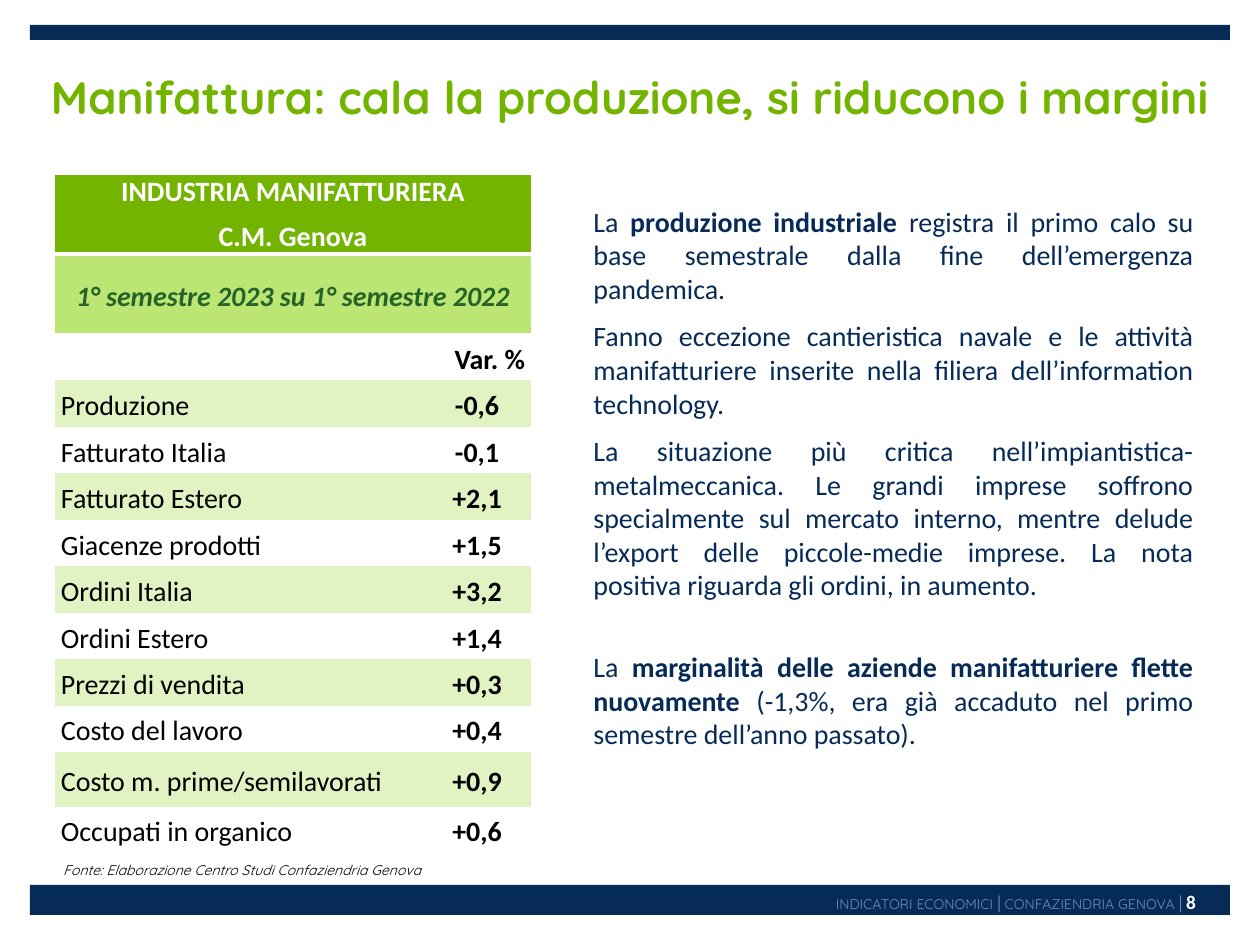
from dataclasses import dataclass, replace
from typing import Any

from lxml.etree import SubElement
from pptx import Presentation
from pptx.dml.color import RGBColor
from pptx.enum.shapes import MSO_SHAPE as Shape
from pptx.enum.text import MSO_ANCHOR as Anchor, MSO_AUTO_SIZE as AutoSize, PP_ALIGN as Align
from pptx.oxml.ns import qn
from pptx.util import Emu, Pt

PX = 914400 / 126
NAVY, GREEN, WHITE, BLACK = "062B57", "73B400", "FFFFFF", "000000"
NO_GRID_STYLE = "{2D5ABB26-0587-4C30-8999-92F81FD0307C}"


@dataclass(frozen=True)
class Style:
    font: str
    size: int
    color: str
    bold: bool = False
    italic: bool = False


@dataclass(frozen=True)
class Run:
    text: str
    style: Style


@dataclass(frozen=True)
class Block:
    runs: tuple[Run, ...]
    format: dict[str, Any]


@dataclass(frozen=True)
class Box:
    left: int
    top: int
    width: int
    height: int

    def emu(self) -> tuple[Emu, ...]:
        return tuple(px(n) for n in (self.left, self.top, self.width, self.height))


def px(length: int) -> Emu:
    return Emu(round(length * PX))


def rgb(color: str) -> RGBColor:
    return RGBColor.from_string(color)


def apply(target: Any, values: dict[str, Any]) -> None:
    for name, value in values.items():
        setattr(target, name, value)


def write(frame: Any, blocks: list[Block]) -> None:
    for index, block in enumerate(blocks):
        paragraph = frame.add_paragraph() if index else frame.paragraphs[0]
        apply(paragraph, block.format)
        for item in block.runs:
            run = paragraph.add_run()
            run.text = item.text
            style = item.style
            apply(run.font, {"name": style.font, "size": Pt(style.size),
                             "bold": style.bold, "italic": style.italic})
            run.font.color.rgb = rgb(style.color)


def add_bar(slide: Any, box: Box) -> None:
    bar = slide.shapes.add_shape(Shape.RECTANGLE, *box.emu())
    bar.shadow.inherit = False
    bar.fill.solid()
    bar.fill.fore_color.rgb = rgb(NAVY)
    bar.line.fill.background()


def add_text(slide: Any, box: Box, blocks: list[Block], frame_format: dict[str, Any]) -> None:
    frame = slide.shapes.add_textbox(*box.emu()).text_frame
    apply(frame, {"word_wrap": True, **frame_format})
    write(frame, blocks)


def fill_cell(cell: Any, color: str, blocks: list[Block]) -> None:
    apply(cell, {"margin_left": px(6), "margin_right": px(6), "margin_top": 0,
                 "margin_bottom": 0, "vertical_anchor": Anchor.MIDDLE})
    cell.fill.solid()
    cell.fill.fore_color.rgb = rgb(color)
    write(cell.text_frame, blocks)


def add_border(cell: Any, side: str, color: str, width: int) -> None:
    properties = cell._tc.get_or_add_tcPr()
    line = SubElement(properties, qn(f"a:{side}"), w=str(Pt(width)))
    SubElement(SubElement(line, qn("a:solidFill")), qn("a:srgbClr"), val=color)
    properties.insert(0, line)


LABEL = Style("Calibri", 16, BLACK)
VALUE = replace(LABEL, bold=True)
HEADING = replace(VALUE, color=WHITE)
PERIOD = replace(VALUE, color="256329", italic=True)
BODY = replace(LABEL, color=NAVY)
STRONG = replace(BODY, bold=True)
TITLE = Style("Quicksand", 26, GREEN, bold=True)
SOURCE = Style("Quicksand", 8, BLACK, italic=True)
FOOTER = Style("Quicksand", 8, "6D90BE")
DIVIDER = replace(FOOTER, size=10)
PAGE = Style("Calibri", 11, WHITE, bold=True)

LOOSE = {"line_spacing": 1.15, "space_after": Pt(10)}
LEFT, CENTER, RIGHT = ({**LOOSE, "alignment": side}
                       for side in (Align.LEFT, Align.CENTER, Align.RIGHT))
HEADING_FORMAT = {"alignment": Align.CENTER, "space_after": Pt(6)}
BODY_FORMAT = {"alignment": Align.JUSTIFY, "space_after": Pt(8)}
LAST_FORMAT = {"alignment": Align.JUSTIFY, "space_before": Pt(19.5)}

INDICATORS = [
    ("Produzione", "-0,6"),
    ("Fatturato Italia", "-0,1"),
    ("Fatturato Estero", "+2,1"),
    ("Giacenze prodotti", "+1,5"),
    ("Ordini Italia", "+3,2"),
    ("Ordini Estero", "+1,4"),
    ("Prezzi di vendita", "+0,3"),
    ("Costo del lavoro", "+0,4"),
    ("Costo m. prime/semilavorati", "+0,9"),
    ("Occupati in organico", "+0,6"),
]
COLUMN_WIDTHS = [368, 108]
ROW_HEIGHTS = [79, 81, 45] + [47, 46] * 4 + [55, 46]

COMMENTARY = [
    Block((Run("La ", BODY), Run("produzione industriale ", STRONG),
           Run("registra il primo calo su base semestrale dalla fine "
               "dell’emergenza pandemica.", BODY)), BODY_FORMAT),
    Block((Run("Fanno eccezione cantieristica navale e le attività manifatturiere "
               "inserite nella filiera dell’information technology.", BODY),), BODY_FORMAT),
    Block((Run("La situazione più critica nell’impiantistica-metalmeccanica. Le grandi "
               "imprese soffrono specialmente sul mercato interno, mentre delude l’export "
               "delle piccole-medie imprese. La nota positiva riguarda gli ordini, "
               "in aumento.", BODY),), BODY_FORMAT),
    Block((Run("La ", BODY),
           Run("marginalità delle aziende manifatturiere flette nuovamente", STRONG),
           Run(" (-1,3%, era già accaduto nel primo semestre dell’anno passato).", BODY)),
          LAST_FORMAT),
]


def add_indicator_table(slide: Any) -> None:
    box = Box(55, 175, sum(COLUMN_WIDTHS), sum(ROW_HEIGHTS))
    table = slide.shapes.add_table(len(ROW_HEIGHTS), len(COLUMN_WIDTHS), *box.emu()).table
    apply(table, {"first_row": False, "horz_banding": False})
    table._tbl.tblPr.find(qn("a:tableStyleId")).text = NO_GRID_STYLE
    for column, width in zip(table.columns, COLUMN_WIDTHS):
        column.width = px(width)
    for row, height in zip(table.rows, ROW_HEIGHTS):
        row.height = px(height)

    headings = [
        (GREEN, "lnB", [Block((Run(text, HEADING),), HEADING_FORMAT)
                        for text in ("INDUSTRIA MANIFATTURIERA", "C.M. Genova")]),
        ("BCE673", "lnT", [Block((Run("1° semestre 2023 su 1° semestre 2022", PERIOD),), CENTER)]),
    ]
    for index, (color, side, blocks) in enumerate(headings):
        first, last = table.cell(index, 0), table.cell(index, 1)
        first.merge(last)
        fill_cell(first, color, blocks)
        for cell in (first, last):
            add_border(cell, side, WHITE, 3)

    fill_cell(table.cell(2, 0), WHITE, [])
    fill_cell(table.cell(2, 1), WHITE, [Block((Run("Var. %", VALUE),), RIGHT)])
    for index, (label, value) in enumerate(INDICATORS):
        color = WHITE if index % 2 else "E1F3C2"
        row = index + 3
        fill_cell(table.cell(row, 0), color, [Block((Run(label, LABEL),), LEFT)])
        fill_cell(table.cell(row, 1), color, [Block((Run(value, VALUE),), CENTER)])


def main() -> None:
    presentation = Presentation()
    apply(presentation, {"slide_width": px(1260), "slide_height": px(945)})
    slide = presentation.slides.add_slide(presentation.slide_layouts[5])
    for bar in (Box(30, 885, 1200, 30), Box(30, 25, 1200, 15)):
        add_bar(slide, bar)

    title = slide.shapes.title
    apply(title, dict(zip(("left", "top", "width", "height"), Box(35, 63, 1191, 87).emu())))
    apply(title.text_frame, {"auto_size": AutoSize.NONE, "vertical_anchor": Anchor.TOP})
    write(title.text_frame, [Block((Run("Manifattura: cala la produzione, si riducono i margini",
                                        TITLE),), {"alignment": Align.CENTER})])

    add_indicator_table(slide)
    add_text(slide, Box(581, 198, 625, 632), COMMENTARY, {})
    add_text(slide, Box(35, 853, 415, 32),
             [Block((Run("Fonte: Elaborazione Centro Studi Confaziendria Genova", SOURCE),),
                    {**CENTER, "space_before": Pt(6)})], {})
    footer = (Run("INDICATORI ECONOMICI ", FOOTER), Run("|", DIVIDER),
              Run(" CONFAZIENDRIA GENOVA ", FOOTER), Run("|", DIVIDER),
              Run(" ", FOOTER), Run("8", PAGE))
    add_text(slide, Box(480, 887, 716, 35), [Block(footer, RIGHT)],
             {"margin_left": 0, "margin_right": 0, "margin_top": 0, "margin_bottom": 0})
    presentation.save("out.pptx")


if __name__ == "__main__":
    main()
